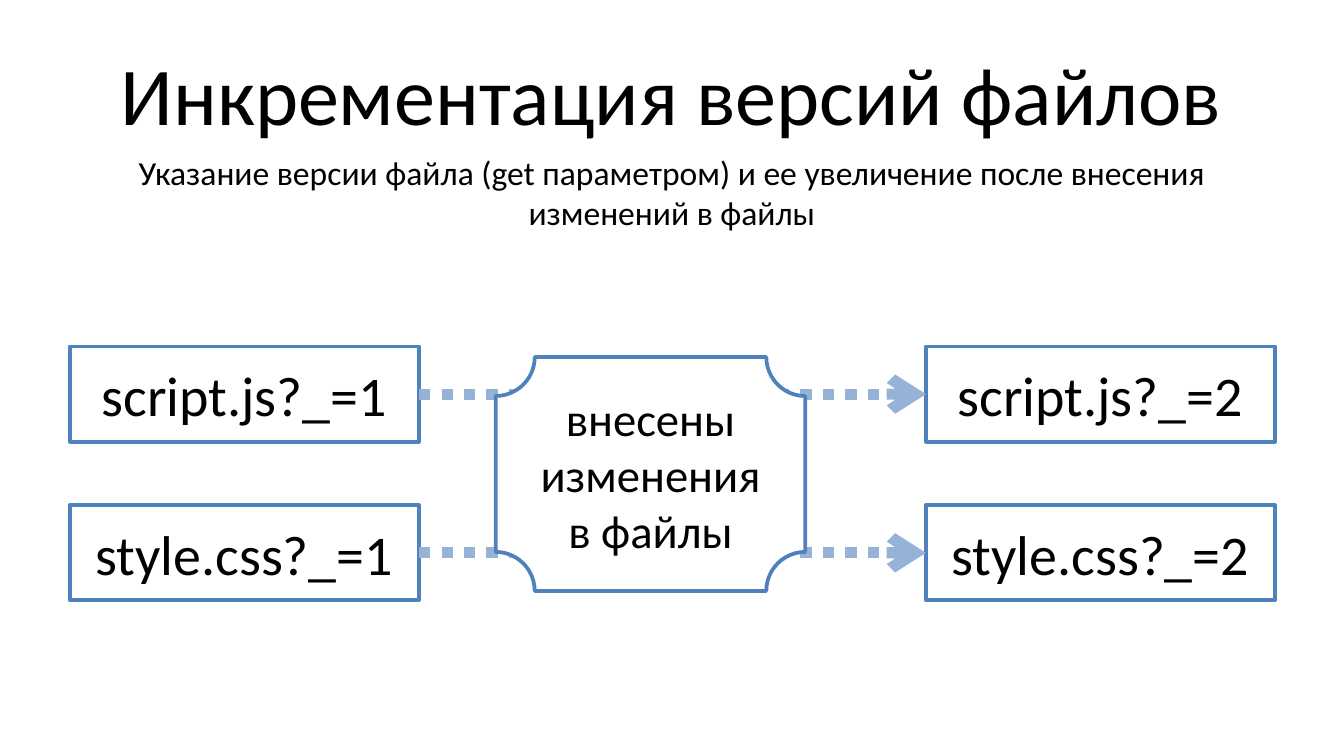
from dataclasses import dataclass

from lxml.etree import SubElement
from pptx import Presentation
from pptx.dml.color import RGBColor
from pptx.enum.dml import MSO_LINE
from pptx.enum.shapes import MSO_CONNECTOR, MSO_SHAPE as Shape
from pptx.enum.text import MSO_ANCHOR as Anchor, MSO_AUTO_SIZE as AutoSize, PP_ALIGN as Align
from pptx.oxml.ns import qn
from pptx.util import Cm, Pt


@dataclass(frozen=True)
class Theme:
    font: str = "Calibri"
    ink: str = "000000"
    paper: str = "FFFFFF"
    outline: str = "4F81BD"
    arrow: str = "95B3D7"
    title_size: int = 44
    subtitle_size: int = 18
    file_size: int = 30
    change_size: int = 25
    outline_width: int = 2
    arrow_width: int = 6


class SlideBuilder:
    """Holds the theme and the current slide."""

    TITLE_ONLY = 5
    RIGHT_SIDE, LEFT_SIDE = 3, 1

    def __init__(self, deck, theme):
        self.theme = theme
        self.slide = deck.slides.add_slide(deck.slide_layouts[self.TITLE_ONLY])

    def set_text(self, frame, text, size, anchor=Anchor.MIDDLE):
        frame_format = {"word_wrap": True, "auto_size": AutoSize.NONE, "vertical_anchor": anchor}
        for name, value in frame_format.items():
            setattr(frame, name, value)
        paragraph = frame.paragraphs[0]
        paragraph.alignment = Align.CENTER
        run = paragraph.add_run()
        run.text = text
        for name, value in {"name": self.theme.font, "size": Pt(size)}.items():
            setattr(run.font, name, value)
        run.font.color.rgb = RGBColor.from_string(self.theme.ink)

    def title(self, text, left, top, width, height):
        heading = self.slide.shapes.title
        place = {"left": left, "top": top, "width": width, "height": height}
        for name, value in place.items():
            setattr(heading, name, Cm(value))
        self.set_text(heading.text_frame, text, self.theme.title_size)

    def subtitle(self, text, *place):
        caption = self.slide.shapes.add_textbox(*map(Cm, place))
        self.set_text(caption.text_frame, text, self.theme.subtitle_size, Anchor.TOP)

    def box(self, text, size, *place, kind=Shape.RECTANGLE):
        box = self.slide.shapes.add_shape(kind, *map(Cm, place))
        box.shadow.inherit = False
        box.fill.solid()
        box.fill.fore_color.rgb = RGBColor.from_string(self.theme.paper)
        box.line.color.rgb = RGBColor.from_string(self.theme.outline)
        box.line.width = Pt(self.theme.outline_width)
        self.set_text(box.text_frame, text, size)
        return box

    def arrow(self, source, target):
        arrow = self.slide.shapes.add_connector(MSO_CONNECTOR.STRAIGHT, 0, 0, 0, 0)
        arrow.begin_connect(source, self.RIGHT_SIDE)
        arrow.end_connect(target, self.LEFT_SIDE)
        arrow.line.color.rgb = RGBColor.from_string(self.theme.arrow)
        arrow.line.width = Pt(self.theme.arrow_width)
        arrow.line.dash_style = MSO_LINE.ROUND_DOT
        # Arrowhead at the end, no shadow
        properties = arrow._element.spPr
        SubElement(properties.find(qn("a:ln")), qn("a:tailEnd"), type="arrow")
        SubElement(properties, qn("a:effectLst"))


def main():
    deck = Presentation()
    deck.slide_width, deck.slide_height = Cm(25.4), Cm(14.29)
    theme = Theme()
    builder = SlideBuilder(deck, theme)

    # Heading
    builder.title("Инкрементация версий файлов", 1.27, 0.57, 22.86, 2.38)
    builder.subtitle(
        "Указание версии файла (get параметром) и ее увеличение после внесения изменений в файлы",
        1.3, 2.74, 22.8, 1.8)

    # Files: one row per file, one column per version
    files = ["script.js", "style.css"]
    version_lefts = [1.32, 17.5]
    first_top, row_step = 6.55, 3
    versions = [
        [builder.box(f"{file}?_={version}", theme.file_size,
                     left, first_top + row * row_step, 6.6, 1.8)
         for row, file in enumerate(files)]
        for version, left in enumerate(version_lefts, start=1)
    ]

    # Arrows from the old version to the new one
    for old_file, new_file in zip(*versions):
        builder.arrow(old_file, new_file)

    # The change, over the arrows
    builder.box("внесены изменения в файлы", theme.change_size,
                9.37, 6.75, 5.85, 4.42, kind=Shape.PLAQUE)

    deck.save("out.pptx")


if __name__ == "__main__":
    main()
